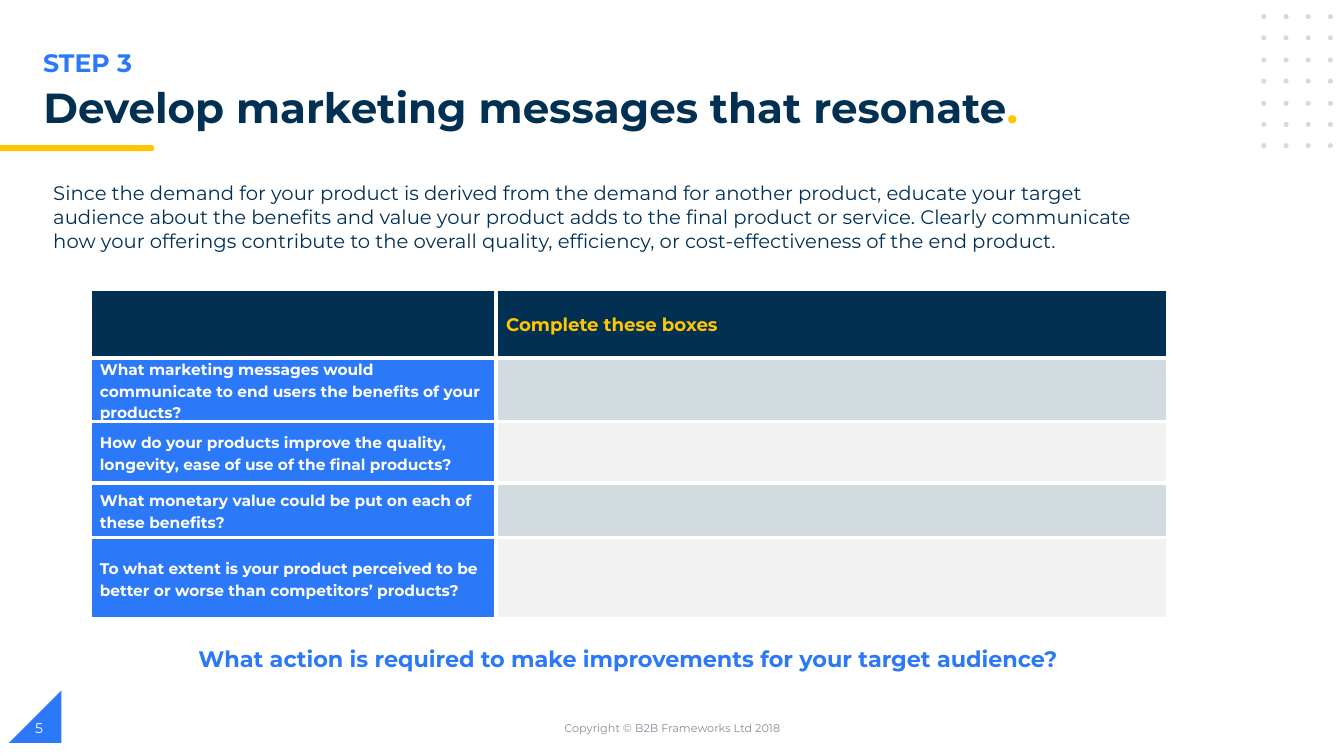
from pptx import Presentation
from pptx.dml.color import RGBColor
from pptx.enum.shapes import MSO_SHAPE as Kind
from pptx.enum.text import MSO_ANCHOR as Anchor, MSO_AUTO_SIZE as Fit, PP_ALIGN as Align
from pptx.util import Pt
from lxml.etree import SubElement
from pptx.oxml.ns import qn

PX = 9144  # 100 px to the inch
NAVY = RGBColor(0x02, 0x30, 0x53)
BLUE = RGBColor(0x2B, 0x79, 0xF8)
GOLD = RGBColor(0xFF, 0xC6, 0x00)
MIST = RGBColor(0xD1, 0xDB, 0xE0)
PALE = RGBColor(0xF2, 0xF2, 0xF2)
GREY = RGBColor(0x88, 0x8C, 0x97)
WHITE = RGBColor(0xFF, 0xFF, 0xFF)

deck = Presentation()
deck.slide_width, deck.slide_height = 1333 * PX, 750 * PX
slide = deck.slides.add_slide(deck.slide_layouts[5])
shapes = slide.shapes


def write(frame, text, size=14, color=NAVY, bold=False, align=Align.LEFT,
          anchor=Anchor.TOP, space=1.0):
    """Add a run to the first paragraph of a text frame."""
    frame.word_wrap = True
    frame.vertical_anchor = anchor
    para = frame.paragraphs[0]
    para.alignment, para.line_spacing = align, space
    run = para.add_run()
    run.text = text
    font = run.font
    font.name, font.size, font.bold = "Montserrat", Pt(size), bold
    font.color.rgb = color


def draw(kind, left, top, width, height, color):
    shape = shapes.add_shape(kind, left * PX, top * PX, width * PX, height * PX)
    shape.shadow.inherit = False
    shape.fill.solid()
    shape.fill.fore_color.rgb = color
    shape.line.fill.background()
    return shape


# Corner triangle and title rule
corner = draw(Kind.RIGHT_TRIANGLE, 9, 685, 52, 52, BLUE)
corner.element.spPr.find(qn("a:xfrm")).set("flipH", "1")
draw(Kind.FLOWCHART_TERMINATOR, 134, 144, 19, 6, GOLD)
draw(Kind.RECTANGLE, 0, 144, 141, 6, GOLD)

# Dot grid
for row in range(7):
    for col in range(4):
        draw(Kind.OVAL, 1251 + 22 * col, round(14 + 21.4 * row), 5, 5, MIST)

# Title
title = shapes.title
title.left, title.top, title.width, title.height = 33 * PX, 82 * PX, 1159 * PX, 56 * PX
title.text_frame.auto_size = Fit.NONE
for text, color in (("Develop marketing messages that resonate", NAVY), (".", GOLD)):
    write(title.text_frame, text, size=30, color=color, bold=True, space=0.9)

# Text boxes
intro = (
    "Since the demand for your product is derived from the demand for another product, "
    "educate your target audience about the benefits and value your product adds to the "
    "final product or service. Clearly communicate how your offerings contribute to the "
    "overall quality, efficiency, or cost-effectiveness of the end product."
)
action = "What action is required to make improvements for your target audience?"
notice = "Copyright © B2B Frameworks Ltd 2018"
for left, top, width, height, text, form in (
    (33, 42, 669, 40, "STEP 3", dict(size=18, color=BLUE, bold=True)),
    (43, 175, 1124, 81, intro, dict()),
    (187, 635, 883, 37, action, dict(size=16, color=BLUE, bold=True)),
    (442, 702, 450, 40, notice,
     dict(size=8, color=GREY, align=Align.CENTER, anchor=Anchor.MIDDLE)),
    (25, 702, 300, 40, "5", dict(size=10, color=WHITE, anchor=Anchor.MIDDLE)),
):
    box = shapes.add_textbox(left * PX, top * PX, width * PX, height * PX)
    write(box.text_frame, text, **form)

# Table
rows = (
    (68, "", NAVY, "Complete these boxes", NAVY),
    (54, "What marketing messages would communicate to end users the benefits of your products?",
     BLUE, "", MIST),
    (61, "How do your products improve the quality, longevity, ease of use of the final products?",
     BLUE, "", PALE),
    (54, "What monetary value could be put on each of these benefits?", BLUE, "", MIST),
    (81, "To what extent is your product perceived to be better or worse than competitors’ products?",
     BLUE, "", PALE),
)
high = sum(row[0] for row in rows)
table = shapes.add_table(len(rows), 2, 89 * PX, 287 * PX, 1069 * PX, high * PX).table
table.horz_banding = False
for col, width in zip(table.columns, (403, 666)):
    col.width = width * PX
for line, (height, ask, tint, reply, shade) in zip(table.rows, rows):
    line.height = height * PX
    for cell, text, color in zip(line.cells, (ask, reply), (tint, shade)):
        cell.margin_left = cell.margin_right = 10 * PX
        cell.margin_top = cell.margin_bottom = 0
        cell.vertical_anchor = Anchor.MIDDLE
        props = cell._tc.get_or_add_tcPr()
        for side in ("lnL", "lnR", "lnT", "lnB"):
            edge = SubElement(props, qn("a:" + side), w=str(Pt(3)))
            paint = SubElement(edge, qn("a:solidFill"))
            SubElement(paint, qn("a:srgbClr"), val=str(WHITE))
        cell.fill.solid()
        cell.fill.fore_color.rgb = color
        if text:
            head = color == NAVY
            write(cell.text_frame, text, size=13 if head else 11, bold=True,
                  color=GOLD if head else WHITE, anchor=Anchor.MIDDLE, space=1.15)

deck.save("out.pptx")
